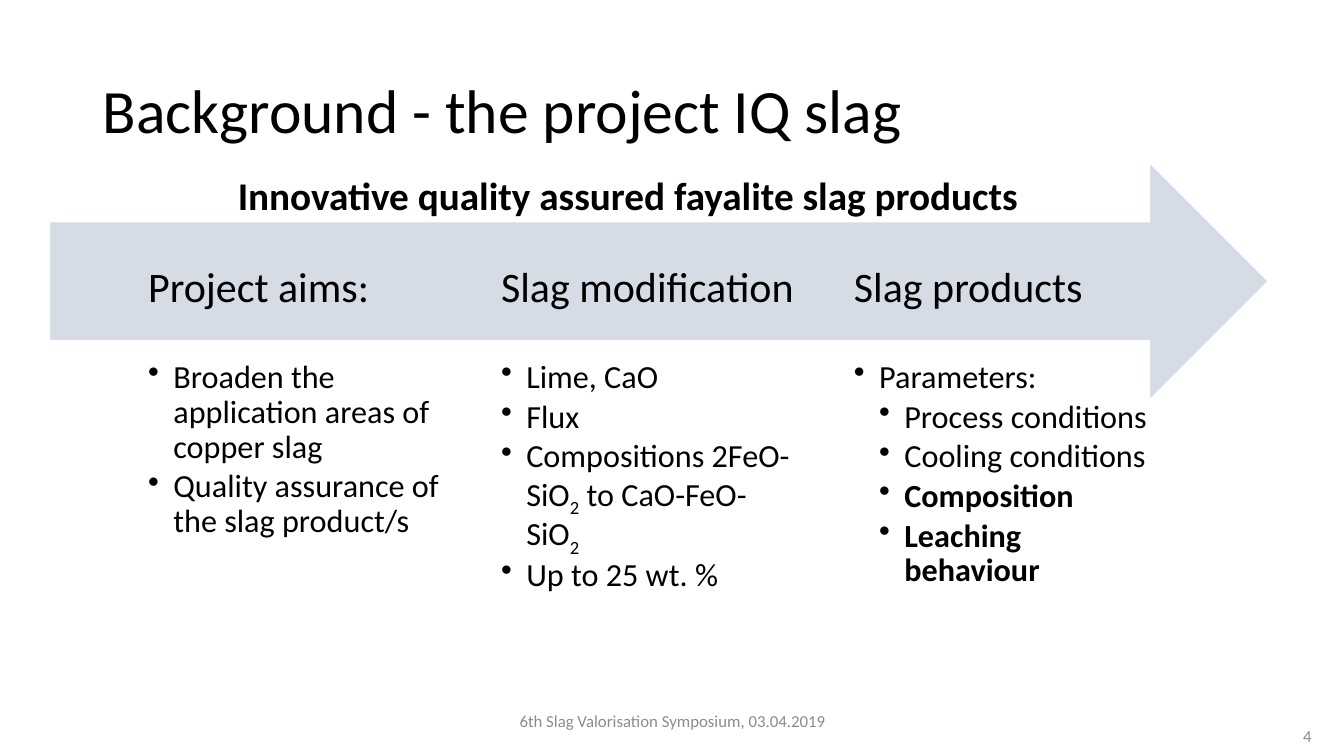
import pptx
import pptx.util
import pptx.dml.color
import pptx.enum.shapes
import pptx.enum.text
import pptx.oxml.ns
import lxml.etree

WIDTH, HEIGHT = 13.33, 7.5
FONT = "Calibri"
HUES = {"ink": "000000", "band": "D6DCE5", "edge": "FFFFFF", "mute": "8C8C8C"}
ALIGN = pptx.enum.text.PP_ALIGN
ANCHOR = pptx.enum.text.MSO_ANCHOR

TITLE = "Background - the project IQ slag"
LEAD = "Innovative quality assured fayalite slag products"
FOOT = "6th Slag Valorisation Symposium, 03.04.2019"
PAGE = "4"
STAGES = [
    ("Project aims:", [
        (0, False, "Broaden the application areas of copper slag"),
        (0, False, "Quality assurance of the slag product/s"),
    ]),
    ("Slag modification", [
        (0, False, "Lime, CaO"),
        (0, False, "Flux"),
        (0, False, "Compositions 2FeO-SiO|2| to CaO-FeO-SiO|2"),
        (0, False, "Up to 25 wt. %"),
    ]),
    ("Slag products", [
        (0, False, "Parameters:"),
        (1, False, "Process conditions"),
        (1, False, "Cooling conditions"),
        (1, True, "Composition"),
        (1, True, "Leaching behaviour"),
    ]),
]


def color(name):
    return pptx.dml.color.RGBColor.from_string(HUES[name])


def part(box, left, top, width, height):
    x, y, w, h = box
    return x + left * w, y + top * h, width * w, height * h


def inches(box):
    return [pptx.util.Inches(value) for value in box]


def bullet(para, level):
    props = para._p.get_or_add_pPr()
    props.set("marL", str(pptx.util.Inches(0.25 * (level + 1))))
    props.set("indent", str(pptx.util.Inches(-0.25)))
    mark = lxml.etree.SubElement(props, pptx.oxml.ns.qn("a:buChar"))
    mark.set("char", "•")


def write(slide, box, text, size, hue="ink", bold=False, align=ALIGN.LEFT,
          anchor=ANCHOR.MIDDLE, pad=(0.1, 0.05), line=1.0, after=0):
    frame = slide.shapes.add_textbox(*inches(box)).text_frame
    frame.word_wrap = True
    frame.vertical_anchor = anchor
    frame.margin_left = frame.margin_right = pptx.util.Inches(pad[0])
    frame.margin_top = frame.margin_bottom = pptx.util.Inches(pad[1])
    items = [(None, bold, text)] if isinstance(text, str) else text
    for order, (level, heavy, words) in enumerate(items):
        para = frame.add_paragraph() if order else frame.paragraphs[0]
        para.alignment = align
        para.line_spacing = line
        para.space_after = pptx.util.Pt(after * size)
        if level is not None:
            para.level = level
            bullet(para, level)
        for turn, piece in enumerate(words.split("|")):
            run = para.add_run()
            run.text = piece
            run.font.name = FONT
            run.font.size = pptx.util.Pt(size)
            run.font.bold = heavy
            run.font.color.rgb = color(hue)
            if turn % 2:
                run._r.get_or_add_rPr().set("baseline", "-25000")


def header(slide, box):
    write(slide, part(box, 0.069, 0.053, 0.863, 0.193), TITLE, 44, line=0.9)


def stage(slide, box, name, points):
    write(slide, part(box, 0, 0, 1, 0.32), name, 30, pad=(0, 0.33),
          line=0.9, after=0.35)
    write(slide, part(box, 0, 0.353, 1, 0.647), points, 23,
          anchor=ANCHOR.TOP, pad=(0, 0), line=0.9, after=0.15)


def flow(slide, box):
    kind = pptx.enum.shapes.MSO_SHAPE.RIGHT_ARROW
    arrow = slide.shapes.add_shape(kind, *inches(box))
    arrow.shadow.inherit = False
    arrow.fill.solid()
    arrow.fill.fore_color.rgb = color("band")
    arrow.line.color.rgb = color("edge")
    arrow.line.width = pptx.util.Pt(1)
    for order, (name, points) in enumerate(STAGES):
        left = 0.081 + 0.2895 * order
        stage(slide, part(box, left, 0.284, 0.2415, 1.56), name, points)
    write(slide, part(box, 0.1464, 0.017, 0.716, 0.2415), LEAD, 28,
          bold=True, anchor=ANCHOR.TOP)


def footer(slide, box):
    write(slide, part(box, 0.3316, 0, 0.3376, 0.727), FOOT, 12,
          hue="mute", align=ALIGN.CENTER)
    write(slide, part(box, 0.7584, 0.273, 0.225, 0.727), PAGE, 12,
          hue="mute", align=ALIGN.RIGHT)


def main():
    deck = pptx.Presentation()
    deck.slide_width, deck.slide_height = inches((WIDTH, HEIGHT))
    slide = deck.slides.add_slide(deck.slide_layouts[6])
    whole = (0, 0, WIDTH, HEIGHT)
    header(slide, whole)
    flow(slide, part(whole, 0.0368, 0.2147, 0.907, 0.3147))
    footer(slide, part(whole, 0, 0.9267, 1, 0.0733))
    deck.save("out.pptx")


if __name__ == "__main__":
    main()
